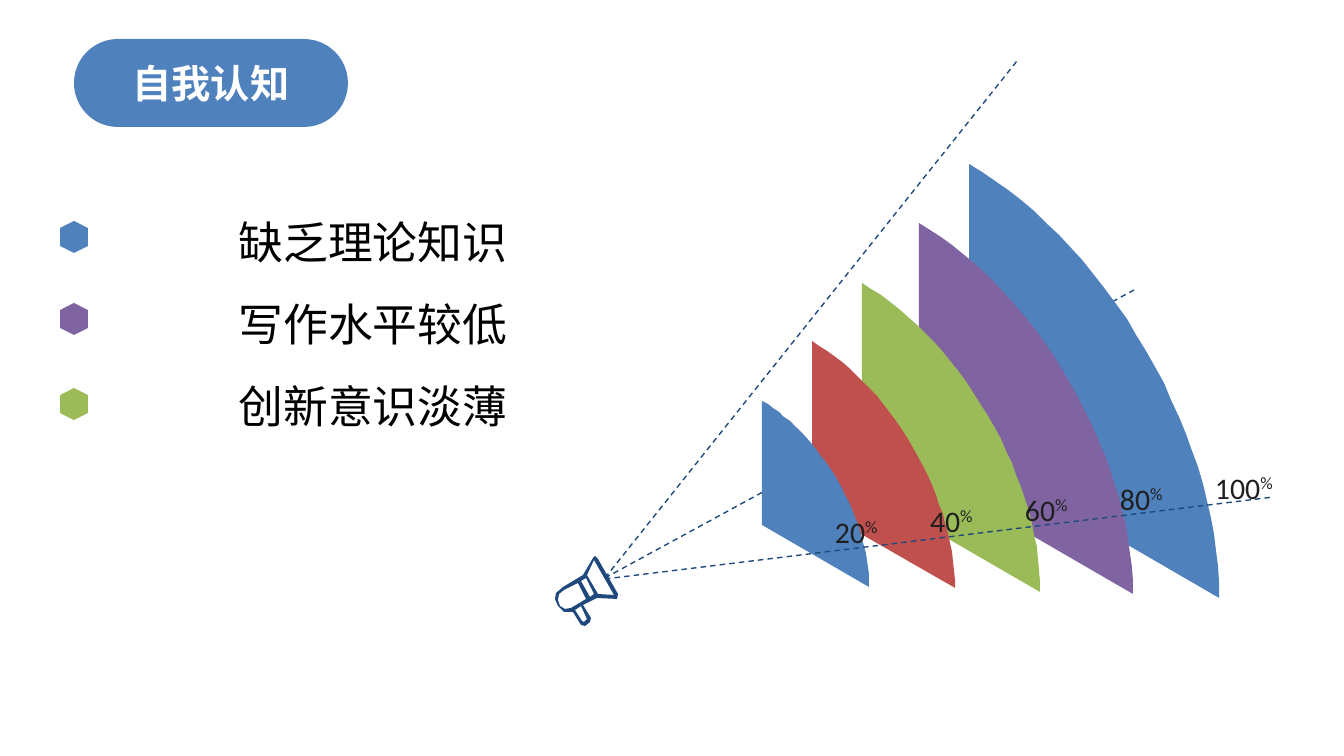
import math
from lxml import etree
from pptx import Presentation
from pptx import util as u
from pptx.dml.color import RGBColor
from pptx.enum import dml, shapes, text

PX = 914400 / 134.4
COLORS = {
    "blue": "4F81BD", "purple": "8064A2", "green": "9BBB59", "red": "C0504D",
    "navy": "1F497D", "ink": "1F1F1F", "black": "000000", "white": "FFFFFF",
}


def style(sp, color):
    sp.shadow.inherit = False
    sp.fill.solid()
    sp.fill.fore_color.rgb = RGBColor.from_string(COLORS[color])
    sp.line.fill.background()


def format_text(p, size, color, bold=False):
    for r in p.runs:
        r.font.name = "Calibri"
        r.font.size = u.Pt(size)
        r.font.bold = bold
        r.font.color.rgb = RGBColor.from_string(COLORS[color])


prs = Presentation()
prs.slide_width, prs.slide_height = round(1344 * PX), round(756 * PX)
s = prs.slides.add_slide(prs.slide_layouts[1])
title, body = s.placeholders

# Title on a pill
pill_box = [round(v * PX) for v in (74, 39, 274, 88)]
pill = s.shapes.add_shape(shapes.MSO_SHAPE.ROUNDED_RECTANGLE, *pill_box)
pill.adjustments[0] = 0.5
style(pill, "blue")
title.left, title.top, title.width, title.height = pill_box
tf = title.text_frame
tf.text = "自我认知"
tf.vertical_anchor = text.MSO_ANCHOR.MIDDLE
tf.paragraphs[0].alignment = text.PP_ALIGN.CENTER
format_text(tf.paragraphs[0], 21, "white", True)
s.shapes._spTree.append(title._element)

# List with hexagon markers
body.left, body.top, body.width, body.height = [round(v * PX) for v in (48, 186, 650, 256)]
tf = body.text_frame
tf.text = "缺乏理论知识\n写作水平较低\n创新意识淡薄"
tf.margin_top = tf.margin_bottom = 0
tf.vertical_anchor = text.MSO_ANCHOR.TOP
for p in tf.paragraphs:
    p.alignment = text.PP_ALIGN.CENTER
    p.line_spacing = u.Pt(44)
    p.space_before = p.space_after = u.Pt(0)
    pPr = p._p.get_or_add_pPr()
    pPr.set("marL", "0")
    pPr.set("indent", "0")
    etree.SubElement(pPr, "{http://schemas.openxmlformats.org/drawingml/2006/main}buNone")
    format_text(p, 24, "black")
for y, color in ((237, "blue"), (319, "purple"), (404, "green")):
    box = [round(v * PX) for v in (58, y - 14, 32, 28)]
    sp = s.shapes.add_shape(shapes.MSO_SHAPE.HEXAGON, *box)
    sp.rotation = 270
    style(sp, color)

# Rays and isometric quarter discs: the middle ray lies behind the discs
rays = [((605, 578), (1134, 290)), ((605, 578), (1017, 61)), ((605, 579), (1274, 497))]
discs = [(969, 453, 289, "blue"), (919, 470, 247, "purple"), (862, 489, 206, "green"),
         (812, 506, 165, "red"), (762, 525, 124, "blue")]
for i, (start, end) in enumerate(rays):
    ray = s.shapes.add_connector(shapes.MSO_CONNECTOR.STRAIGHT,
                                 *[round(v * PX) for v in start + end])
    ray.line.width = u.Pt(0.75)
    ray.line.color.rgb = RGBColor.from_string(COLORS["navy"])
    ray.line.dash_style = dml.MSO_LINE.DASH
    etree.SubElement(ray._element.spPr,
                     "{http://schemas.openxmlformats.org/drawingml/2006/main}effectLst")
    if i > 0:
        continue
    for x, y, radius, color in discs:
        arc = []
        for degrees in range(0, 91, 3):
            a = math.radians(degrees)
            across, up = radius * math.cos(a), radius * math.sin(a)
            arc.append((x + across * math.cos(math.pi / 6), y + across / 2 - up))
        fb = s.shapes.build_freeform(x, y, scale=PX)
        fb.add_line_segments(arc, close=True)
        style(fb.convert_to_shape(), color)

# Percent labels
for i in range(5):
    box = [round(v * PX) for v in (818 + 95 * i, 505 - 11 * i, 126, 54)]
    tb = s.shapes.add_textbox(*box)
    tf = tb.text_frame
    tf.word_wrap = True
    tf.margin_left = tf.margin_right = round(17 * PX)
    tf.margin_top = tf.margin_bottom = round(9 * PX)
    p = tf.paragraphs[0]
    p.text = str(20 * (i + 1))
    p.add_run().text = "%"
    format_text(p, 16, "ink")
    p.runs[1].font._element.set("baseline", "36000")

# Megaphone: an outline with four holes
outline = [(593, 558), (595, 556), (598, 559), (618, 594), (617, 599), (597, 598),
           (583, 605), (591, 618), (590, 622), (585, 626), (581, 625), (573, 612),
           (564, 612), (558, 606), (555, 599), (556, 593), (563, 587), (583, 575)]
horn = [(594, 560), (587, 575), (598, 594), (614, 595)]
band = [(581, 581), (590, 597), (594, 594), (586, 578)]
barrel = [(564, 590), (559, 594), (558, 600), (560, 606), (565, 609), (571, 608),
          (586, 599), (578, 583)]
handle = [(575, 610), (582, 621), (584, 622), (587, 619), (581, 606)]
fb = s.shapes.build_freeform(*outline[0], scale=PX)
fb.add_line_segments(outline[1:], close=True)
for hole in (horn, band, barrel, handle):
    fb.move_to(*hole[0])
    fb.add_line_segments(hole[1:], close=True)
style(fb.convert_to_shape(), "navy")

prs.save("out.pptx")
